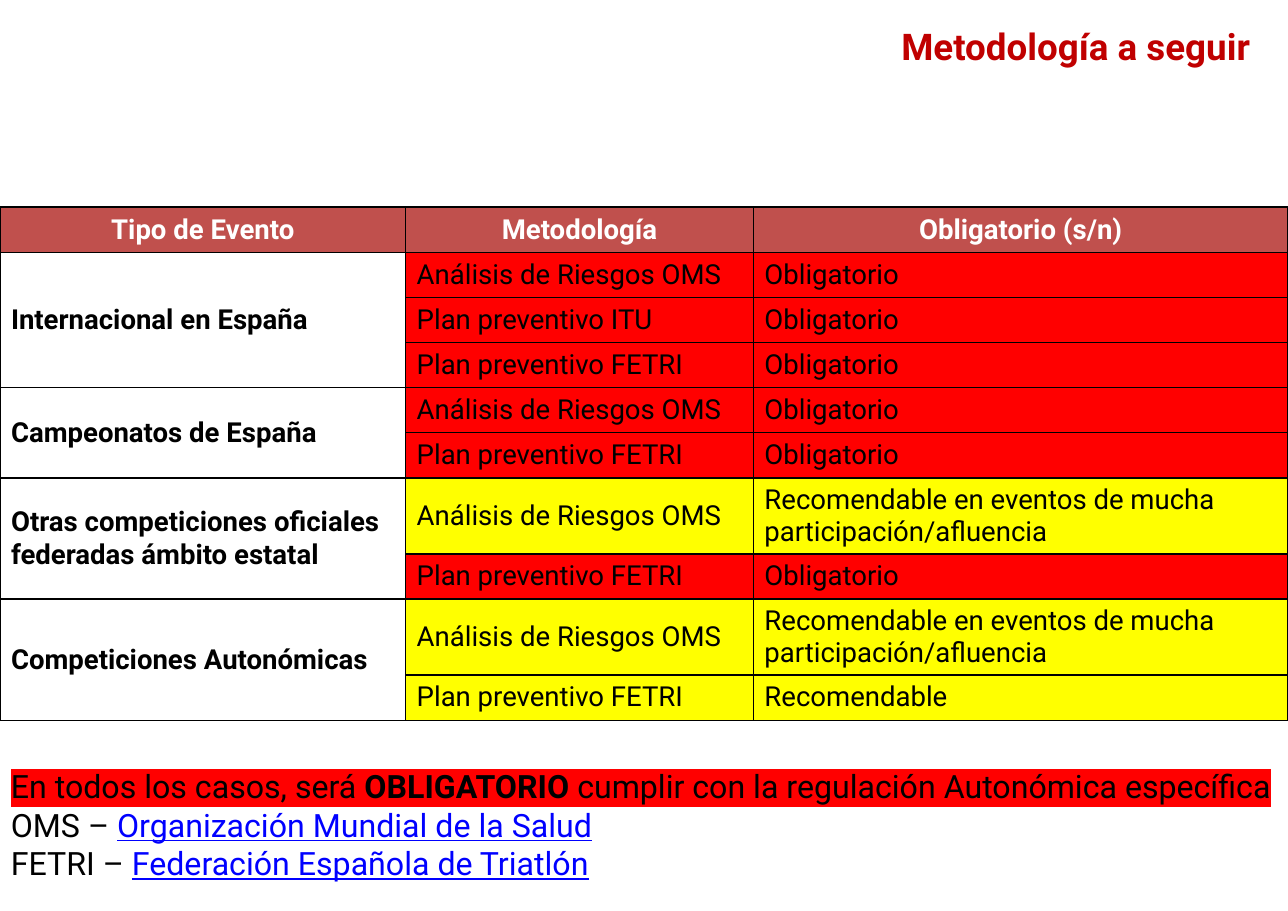
from lxml.etree import SubElement
from pptx import Presentation
from pptx.dml.color import RGBColor
from pptx.enum.text import MSO_ANCHOR, PP_ALIGN
from pptx.oxml import parse_xml
from pptx.oxml.ns import nsdecls, qn
from pptx.util import Inches, Pt

WIDTH, HEIGHT = Inches(11.69), Inches(8.27)
FONT = "Roboto"
BLACK = RGBColor(0, 0, 0)
WHITE = RGBColor(255, 255, 255)
RED = RGBColor(255, 0, 0)
YELLOW = RGBColor(255, 255, 0)
DARK_RED = RGBColor(0xC0, 0, 0)
HEADER_RED = RGBColor(0xC0, 0x50, 0x4D)
LINK_BLUE = RGBColor(0, 0, 255)

RISKS, ITU, FETRI = "Análisis de Riesgos OMS", "Plan preventivo ITU", "Plan preventivo FETRI"
MANDATORY = ("Obligatorio", RED)
ADVISED = ("Recomendable", YELLOW)
ADVISED_BIG = ("Recomendable en eventos de mucha participación/afluencia", YELLOW)

HEADERS = ["Tipo de Evento", "Metodología", "Obligatorio (s/n)"]
EVENTS = [
    ("Internacional en España", [(RISKS, MANDATORY), (ITU, MANDATORY), (FETRI, MANDATORY)]),
    ("Campeonatos de España", [(RISKS, MANDATORY), (FETRI, MANDATORY)]),
    ("Otras competiciones oficiales federadas ámbito estatal",
     [(RISKS, ADVISED_BIG), (FETRI, MANDATORY)]),
    ("Competiciones Autonómicas", [(RISKS, ADVISED_BIG), (FETRI, ADVISED)]),
]
COLUMN_SHARES = [0.315, 0.27, 0.415]
ROW_HEIGHT, TALL_ROW_HEIGHT = Inches(0.41), Inches(0.69)

# Each note line is a list of (text, colour, bold, underline, highlight)
NOTES = [
    [("En todos los casos, será ", BLACK, False, False, RED),
     ("OBLIGATORIO", BLACK, True, False, RED),
     (" cumplir con la regulación Autonómica específica", BLACK, False, False, RED)],
    [("OMS – ", BLACK, False, False, None),
     ("Organización Mundial de la Salud", LINK_BLUE, False, True, None)],
    [("FETRI – ", BLACK, False, False, None),
     ("Federación Española de Triatlón", LINK_BLUE, False, True, None)],
]


def style_run(r, size, color, bold=False):
    r.font.name, r.font.size, r.font.bold = FONT, Pt(size), bold
    r.font.color.rgb = color


def highlight_run(r, color):
    mark = parse_xml(f'<a:highlight {nsdecls("a")}><a:srgbClr val="{color}"/></a:highlight>')
    r.font._element.find(qn("a:solidFill")).addnext(mark)


def add_borders(cell):
    tc_pr = cell._tc.get_or_add_tcPr()
    for i, side in enumerate(("lnL", "lnR", "lnT", "lnB")):
        line = parse_xml(f'<a:{side} {nsdecls("a")} w="{Pt(1)}"/>')
        fill = SubElement(line, qn("a:solidFill"))
        SubElement(fill, qn("a:srgbClr"), val=str(BLACK))
        tc_pr.insert(i, line)


def fill_cell(cell, text, fill, color=BLACK, bold=False, align=PP_ALIGN.LEFT):
    cell.text = text
    cell.vertical_anchor = MSO_ANCHOR.MIDDLE
    cell.fill.solid()
    cell.fill.fore_color.rgb = fill
    p = cell.text_frame.paragraphs[0]
    p.alignment = align
    for r in p.runs:
        style_run(r, 18, color, bold)
    add_borders(cell)


def add_title(s, left, top, width, height):
    title = s.shapes.title
    title.left, title.top, title.width, title.height = left, top, width, height
    tf = title.text_frame
    tf.text = "Metodología a seguir"
    tf.vertical_anchor = MSO_ANCHOR.MIDDLE
    tf.margin_left = tf.margin_right = Inches(0.11)
    tf.margin_top = tf.margin_bottom = Inches(0.06)
    p = tf.paragraphs[0]
    p.alignment = PP_ALIGN.RIGHT
    style_run(p.runs[0], 24, DARK_RED, bold=True)


def add_event_table(s, left, top, width):
    row_count = 1 + sum(len(plans) for _, plans in EVENTS)
    table = s.shapes.add_table(row_count, len(HEADERS), left, top, width,
                               ROW_HEIGHT * row_count).table
    for column, share in zip(table.columns, COLUMN_SHARES):
        column.width = int(width * share)
    for row in table.rows:
        row.height = ROW_HEIGHT

    # Header row
    for col, text in enumerate(HEADERS):
        fill_cell(table.cell(0, col), text, HEADER_RED, WHITE, True, PP_ALIGN.CENTER)

    # One merged event cell beside its plans
    first = 1
    for event, plans in EVENTS:
        for row, (plan, (duty, color)) in enumerate(plans, first):
            fill_cell(table.cell(row, 0), event if row == first else "", WHITE, bold=True)
            fill_cell(table.cell(row, 1), plan, color)
            fill_cell(table.cell(row, 2), duty, color)
            if duty == ADVISED_BIG[0]:
                table.rows[row].height = TALL_ROW_HEIGHT
        last = first + len(plans) - 1
        table.cell(first, 0).merge(table.cell(last, 0))
        first = last + 1


def add_notes_box(s, left, top, width, height):
    tf = s.shapes.add_textbox(left, top, width, height).text_frame
    tf.word_wrap = True
    for i, line in enumerate(NOTES):
        p = tf.paragraphs[0] if i == 0 else tf.add_paragraph()
        for text, color, bold, underline, highlight in line:
            r = p.add_run()
            r.text = text
            style_run(r, 21, color, bold)
            r.font.underline = underline
            if highlight is not None:
                highlight_run(r, highlight)


def main():
    prs = Presentation()
    prs.slide_width, prs.slide_height = WIDTH, HEIGHT
    s = prs.slides.add_slide(prs.slide_layouts[5])
    add_title(s, int(WIDTH * 0.48), int(HEIGHT * 0.02), int(WIDTH * 0.5), int(HEIGHT * 0.06))
    add_event_table(s, 0, Inches(1.88), WIDTH)
    add_notes_box(s, 0, Inches(6.91), WIDTH, int(HEIGHT * 0.14))
    prs.save("out.pptx")


if __name__ == "__main__":
    main()
